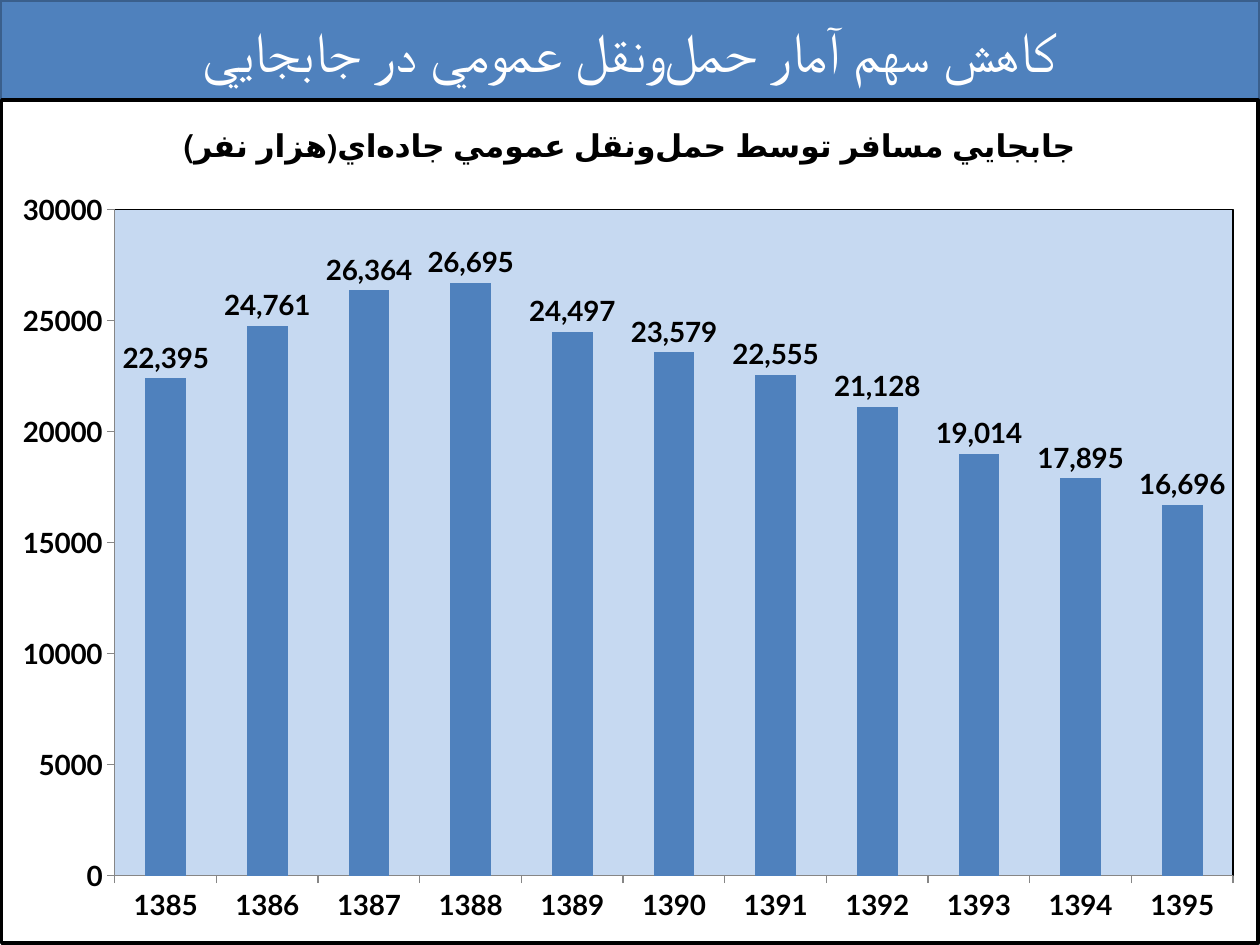
import pptx
import pptx.util
import pptx.chart.data
import pptx.dml.color
import pptx.enum.chart
import pptx.enum.shapes
import pptx.enum.text
import pptx.oxml
import pptx.oxml.ns

Pt = pptx.util.Pt
qn = pptx.oxml.ns.qn

ZWNJ = chr(0x200C)  # zero-width non-joiner, needed inside Persian compounds
TRANSPORT = ZWNJ.join(["حمل", "ونقل"])
ROAD = ZWNJ.join(["جاده", "اي"])
HEADING = f"كاهش سهم آمار {TRANSPORT} عمومي در جابجايي"
CHART_TITLE = f"جابجايي مسافر توسط {TRANSPORT} عمومي {ROAD}(هزار نفر)"
FIRST_YEAR = 1385
PASSENGERS = [22395, 24761, 26364, 26695, 24497, 23579,
              22555, 21128, 19014, 17895, 16696]

COLORS = {"blue": "4F81BD", "edge": "3A5F8C", "plot": "C6D9F1",
          "axis": "868686", "black": "000000", "white": "FFFFFF"}
WIDTH, HEIGHT = 720, 540
HEADING_H, CHART_TOP = 56.9, 56.2
PLOT = {"x": 0.09, "y": 0.13, "w": 0.89, "h": 0.79}
HEADING_FONT = {"name": "Calibri", "size": Pt(32)}
TITLE_FONT = {"name": "Lato", "size": Pt(18), "bold": True}
LABEL_FONT = {"name": "Lato", "size": Pt(16), "bold": True}


def rgb(name):
    return pptx.dml.color.RGBColor.from_string(COLORS[name])


def set_font(font, values, color):
    for key, value in values.items():
        setattr(font, key, value)
    font.color.rgb = rgb(color)


def write(tf, text, font, color):
    """Put one centred right-to-left paragraph in a text frame."""
    p = tf.paragraphs[0]
    p.alignment = pptx.enum.text.PP_ALIGN.CENTER
    p._p.get_or_add_pPr().set("rtl", "1")
    r = p.add_run()
    r.text = text
    set_font(r.font, font, color)


def area_format(fill, line, width):
    return pptx.oxml.parse_xml(
        '<c:spPr xmlns:c="http://schemas.openxmlformats.org/drawingml/2006/chart" '
        'xmlns:a="http://schemas.openxmlformats.org/drawingml/2006/main">'
        f'<a:solidFill><a:srgbClr val="{COLORS[fill]}"/></a:solidFill>'
        f'<a:ln w="{int(Pt(width))}"><a:solidFill><a:srgbClr val="{COLORS[line]}"/>'
        '</a:solidFill></a:ln></c:spPr>')


def place_plot(plot_area):
    """Fix the inner plot area as fractions of the chart."""
    fields = "".join(f'<c:{k}Mode val="edge"/>' for k in "xy")
    fields += "".join(f'<c:{k} val="{v}"/>' for k, v in PLOT.items())
    for old in plot_area.findall(qn("c:layout")):
        plot_area.remove(old)
    plot_area.insert(0, pptx.oxml.parse_xml(
        '<c:layout xmlns:c="http://schemas.openxmlformats.org/drawingml/2006/chart">'
        f'<c:manualLayout><c:layoutTarget val="inner"/>{fields}'
        '</c:manualLayout></c:layout>'))


def add_heading(s):
    sp = s.shapes.add_shape(pptx.enum.shapes.MSO_SHAPE.RECTANGLE,
                            0, 0, Pt(WIDTH), Pt(HEADING_H))
    sp.shadow.inherit = False
    sp.fill.solid()
    sp.fill.fore_color.rgb = rgb("blue")
    sp.line.color.rgb = rgb("edge")
    sp.line.width = Pt(2)
    tf = sp.text_frame
    tf.word_wrap = True
    tf.vertical_anchor = pptx.enum.text.MSO_ANCHOR.MIDDLE
    write(tf, HEADING, HEADING_FONT, "white")


def add_passenger_chart(s):
    data = pptx.chart.data.CategoryChartData(number_format="#,##0")
    data.categories = [str(FIRST_YEAR + i) for i in range(len(PASSENGERS))]
    data.add_series(CHART_TITLE, PASSENGERS)
    chart = s.shapes.add_chart(
        pptx.enum.chart.XL_CHART_TYPE.COLUMN_CLUSTERED,
        0, Pt(CHART_TOP), Pt(WIDTH), Pt(HEIGHT - CHART_TOP), data).chart
    set_font(chart.font, {"name": "Lato", "size": Pt(10)}, "black")
    chart.has_legend = False
    chart.has_title = True
    write(chart.chart_title.text_frame, CHART_TITLE, TITLE_FONT, "black")

    plot = chart.plots[0]
    plot.gap_width = 150
    plot.vary_by_categories = False
    fill = plot.series[0].format.fill
    fill.solid()
    fill.fore_color.rgb = rgb("blue")
    plot.has_data_labels = True
    labels = plot.data_labels
    labels.show_value = True
    labels.number_format, labels.number_format_is_linked = "#,##0", False
    labels.position = pptx.enum.chart.XL_LABEL_POSITION.OUTSIDE_END
    set_font(labels.font, LABEL_FONT, "black")

    for axis, number_format in ((chart.category_axis, "General"),
                                (chart.value_axis, "0")):
        axis.has_major_gridlines = False
        axis.major_tick_mark = pptx.enum.chart.XL_TICK_MARK.OUTSIDE
        axis.format.line.color.rgb = rgb("axis")
        axis.tick_labels.number_format = number_format
        axis.tick_labels.number_format_is_linked = False
        set_font(axis.tick_labels.font, LABEL_FONT, "black")
    scale = {"minimum_scale": 0, "maximum_scale": 30000, "major_unit": 5000}
    for key, value in scale.items():
        setattr(chart.value_axis, key, value)

    chart_xml = chart._chartSpace.find(qn("c:chart"))
    chart_xml.addnext(area_format("white", "black", 2))
    plot_area = chart_xml.find(qn("c:plotArea"))
    place_plot(plot_area)
    plot_area.append(area_format("plot", "black", 0.75))


def main():
    prs = pptx.Presentation()
    prs.slide_width, prs.slide_height = Pt(WIDTH), Pt(HEIGHT)
    s = prs.slides.add_slide(prs.slide_layouts[6])
    add_heading(s)
    add_passenger_chart(s)
    prs.save("out.pptx")


if __name__ == "__main__":
    main()
